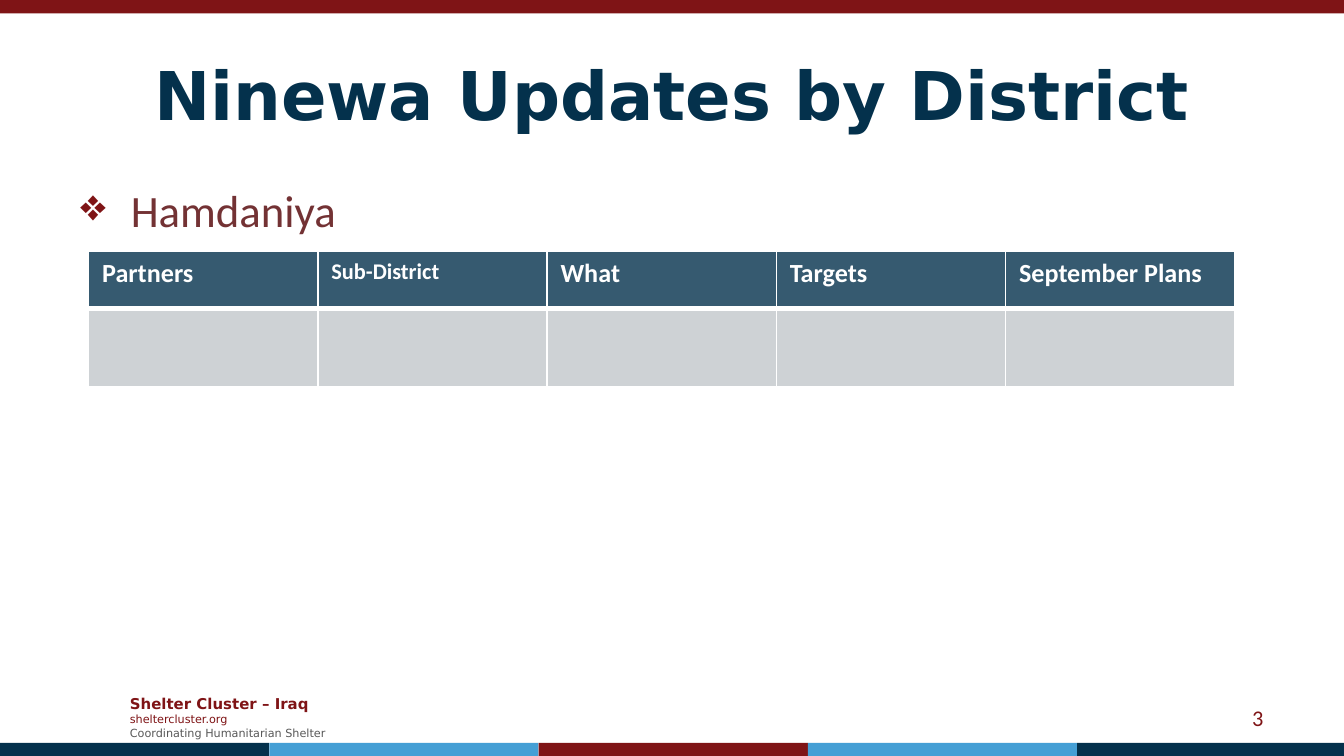
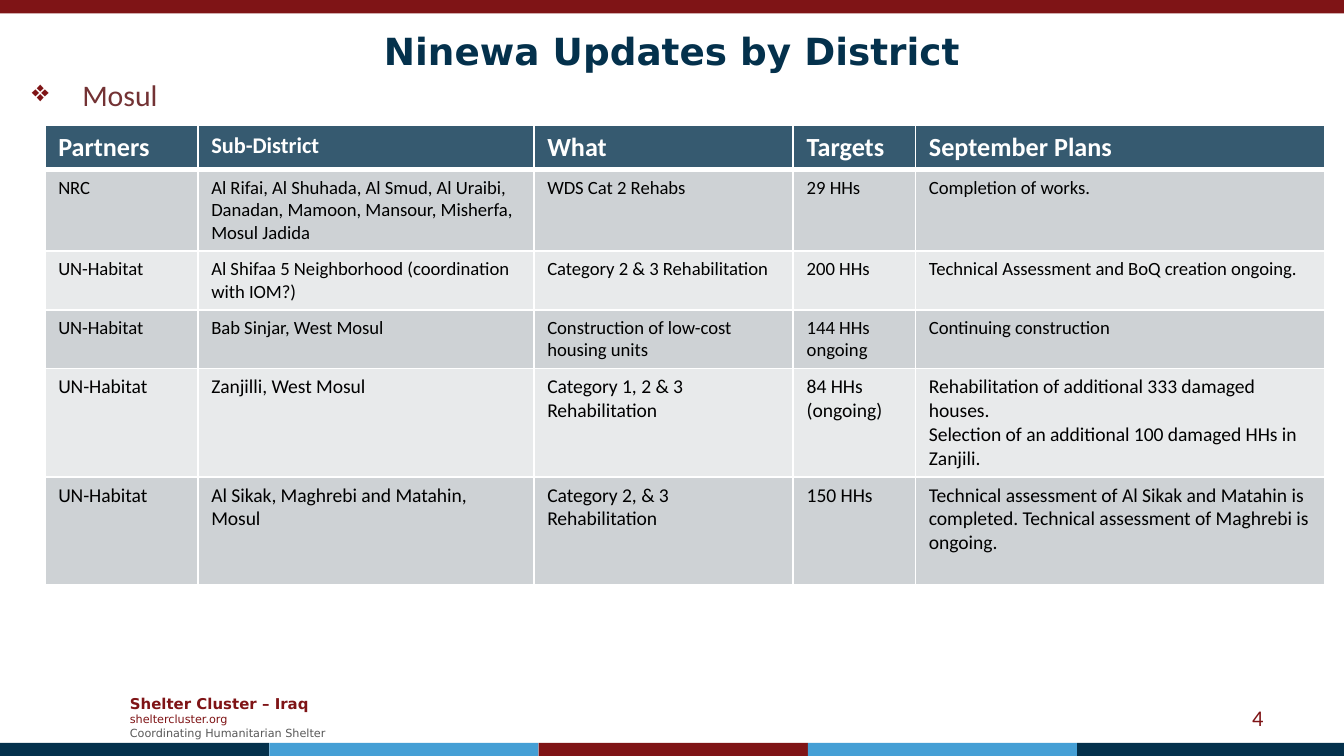
import dataclasses

import lxml.etree
import pptx
import pptx.dml.color
import pptx.enum.shapes
import pptx.enum.text
import pptx.oxml.ns
import pptx.util

Pt = pptx.util.Pt
Align = pptx.enum.text.PP_ALIGN
Anchor = pptx.enum.text.MSO_ANCHOR
qn = pptx.oxml.ns.qn


@dataclasses.dataclass(frozen=True)
class Theme:
    navy: str = "04314C"
    blue: str = "459FD5"
    red: str = "7F1416"
    brick: str = "733234"
    grey: str = "595959"
    white: str = "FFFFFF"
    black: str = "000000"
    header_fill: str = "365A70"
    row_fills: tuple = ("CED2D5", "E8EAEB")
    heading_font: str = "DejaVu Sans"
    body_font: str = "Calibri"
    organisation_size: float = 8
    footer_size: float = 6
    number_size: float = 12
    header_sizes: tuple = (14, 12, 14, 14, 14)
    cell_size: float = 10
    large_cell_size: float = 10.5
    thin_border: float = 1
    thick_border: float = 3


THEME = Theme()
TITLE = "Ninewa Updates by District"
HEADERS = ["Partners", "Sub-District", "What", "Targets", "September Plans"]
FOOTER = [
    ("Shelter Cluster – Iraq", THEME.organisation_size, THEME.red, True),
    ("sheltercluster.org", THEME.footer_size, THEME.red, False),
    ("Coordinating Humanitarian Shelter", THEME.footer_size, THEME.grey, False),
]
MOSUL_ROWS = [
    ["NRC",
     "Al Rifai, Al Shuhada, Al Smud, Al Uraibi, Danadan, Mamoon, Mansour, Misherfa, Mosul Jadida",
     "WDS Cat 2 Rehabs", "29 HHs", "Completion of works."],
    ["UN-Habitat", "Al Shifaa 5 Neighborhood (coordination with IOM?)",
     "Category 2 & 3 Rehabilitation", "200 HHs",
     "Technical Assessment and BoQ creation ongoing."],
    ["UN-Habitat", "Bab Sinjar, West Mosul", "Construction of low-cost housing units",
     "144 HHs ongoing", "Continuing construction"],
    ["UN-Habitat", "Zanjilli, West Mosul", "Category 1, 2 & 3 Rehabilitation",
     "84 HHs (ongoing)",
     "Rehabilitation of additional 333 damaged houses.\n"
     "Selection of an additional 100 damaged HHs in Zanjili."],
    ["UN-Habitat", "Al Sikak, Maghrebi and Matahin, Mosul", "Category 2, & 3 Rehabilitation",
     "150 HHs",
     "Technical assessment of Al Sikak and Matahin is completed. "
     "Technical assessment of Maghrebi is ongoing."],
]


def rgb(color):
    return pptx.dml.color.RGBColor.from_string(color)


def apply(target, values):
    for name, value in values.items():
        setattr(target, name, value)


class Deck:
    def __init__(self, theme):
        self.theme = theme
        self.presentation = pptx.Presentation()
        apply(self.presentation, {"slide_width": Pt(720), "slide_height": Pt(405)})
        self.slide = None

    def add_slide(self, number):
        theme = self.theme
        self.slide = self.presentation.slides.add_slide(self.presentation.slide_layouts[6])
        self.footer()
        self.band(0, 0, 720, theme.red)
        colors = [theme.navy, theme.blue, theme.red, theme.blue, theme.navy]
        for index, color in enumerate(colors):
            self.band(index * 144.25, 398, 144.25, color)
        frame = self.text_box(516, 373.5, 168, 21.5, Anchor.MIDDLE)
        self.add_text(frame.paragraphs[0], str(number), theme.number_size, theme.red,
                      alignment=Align.RIGHT)

    def band(self, left, top, width, color):
        shape = self.slide.shapes.add_shape(
            pptx.enum.shapes.MSO_SHAPE.RECTANGLE, Pt(left), Pt(top), Pt(width), Pt(7.2))
        shape.shadow.inherit = False
        shape.fill.solid()
        shape.fill.fore_color.rgb = rgb(color)
        shape.line.fill.background()

    def text_box(self, left, top, width, height, anchor=Anchor.TOP):
        shape = self.slide.shapes.add_textbox(Pt(left), Pt(top), Pt(width), Pt(height))
        apply(shape.text_frame, {"word_wrap": True, "vertical_anchor": anchor})
        return shape.text_frame

    def add_text(self, paragraph, text, size, color, font=None, bold=False,
                 alignment=Align.LEFT):
        paragraph.alignment = alignment
        run = paragraph.add_run()
        run.text = text
        apply(run.font, {"name": font or self.theme.body_font, "size": Pt(size), "bold": bold})
        run.font.color.rgb = rgb(color)

    def add_lines(self, frame, lines, font=None):
        for index, (text, size, color, bold) in enumerate(lines):
            paragraph = frame.add_paragraph() if index else frame.paragraphs[0]
            self.add_text(paragraph, text, size, color, font, bold)

    def footer(self):
        frame = self.text_box(62.5, 368.5, 124.5, 31.5, Anchor.MIDDLE)
        self.add_lines(frame, FOOTER, self.theme.heading_font)

    def title(self, text, height, size):
        frame = self.text_box(36, 16.5, 648, height, Anchor.MIDDLE)
        self.add_text(frame.paragraphs[0], text, size, self.theme.navy,
                      self.theme.heading_font, True, Align.CENTER)

    def district(self, text, box, size):
        paragraph = self.text_box(*box).paragraphs[0]
        properties = paragraph._p.get_or_add_pPr()
        properties.set("marL", str(Pt(27)))
        properties.set("indent", str(-Pt(27)))
        bullet_color = lxml.etree.SubElement(properties, qn("a:buClr"))
        lxml.etree.SubElement(bullet_color, qn("a:srgbClr"), val=self.theme.red)
        lxml.etree.SubElement(properties, qn("a:buChar"), char="❖")
        self.add_text(paragraph, text, size, self.theme.brick)

    def border(self, cell, row):
        properties = cell._tc.get_or_add_tcPr()
        thick_side = {0: "lnB", 1: "lnT"}.get(row)
        for index, side in enumerate(["lnL", "lnR", "lnT", "lnB"]):
            width = self.theme.thick_border if side == thick_side else self.theme.thin_border
            line = lxml.etree.Element(qn(f"a:{side}"), w=str(Pt(width)))
            fill = lxml.etree.SubElement(line, qn("a:solidFill"))
            lxml.etree.SubElement(fill, qn("a:srgbClr"), val=self.theme.white)
            properties.insert(index, line)

    def cell(self, cell, row, text, size):
        theme = self.theme
        header = row == 0
        cell.fill.solid()
        cell.fill.fore_color.rgb = rgb(
            theme.header_fill if header else theme.row_fills[(row - 1) % 2])
        self.border(cell, row)
        if text:
            color = theme.white if header else theme.black
            lines = [(line, size, color, header) for line in text.split("\n")]
            self.add_lines(cell.text_frame, lines)

    def table(self, left, top, widths, heights, rows, large_from=None):
        theme = self.theme
        table = self.slide.shapes.add_table(
            len(heights), len(widths), Pt(left), Pt(top),
            Pt(sum(widths)), Pt(sum(heights))).table
        for column, width in zip(table.columns, widths):
            column.width = Pt(width)
        for row, (height, texts) in enumerate(zip(heights, [HEADERS] + rows)):
            table.rows[row].height = Pt(height)
            large = large_from is not None and row >= large_from
            size = theme.large_cell_size if large else theme.cell_size
            sizes = [size] * len(texts) if row else theme.header_sizes
            for column, text in enumerate(texts):
                self.cell(table.cell(row, column), row, text, sizes[column])


def main():
    deck = Deck(THEME)

    deck.add_slide(3)
    deck.title(TITLE, 67.5, 36)
    deck.district("Hamdaniya", (36, 94.5, 648, 267), 24)
    deck.table(47.5, 134.5, [122.8] * 5, [31, 41.5], [[""] * 5])

    deck.add_slide(4)
    deck.title(TITLE, 21, 20)
    deck.district("Mosul", (10, 37.5, 700.5, 324.5), 16)
    deck.table(24, 67, [82, 180, 139, 65.5, 219.5], [24, 43.5, 31.5, 31.5, 58, 58],
               MOSUL_ROWS, large_from=4)

    deck.presentation.save("out.pptx")


if __name__ == "__main__":
    main()
